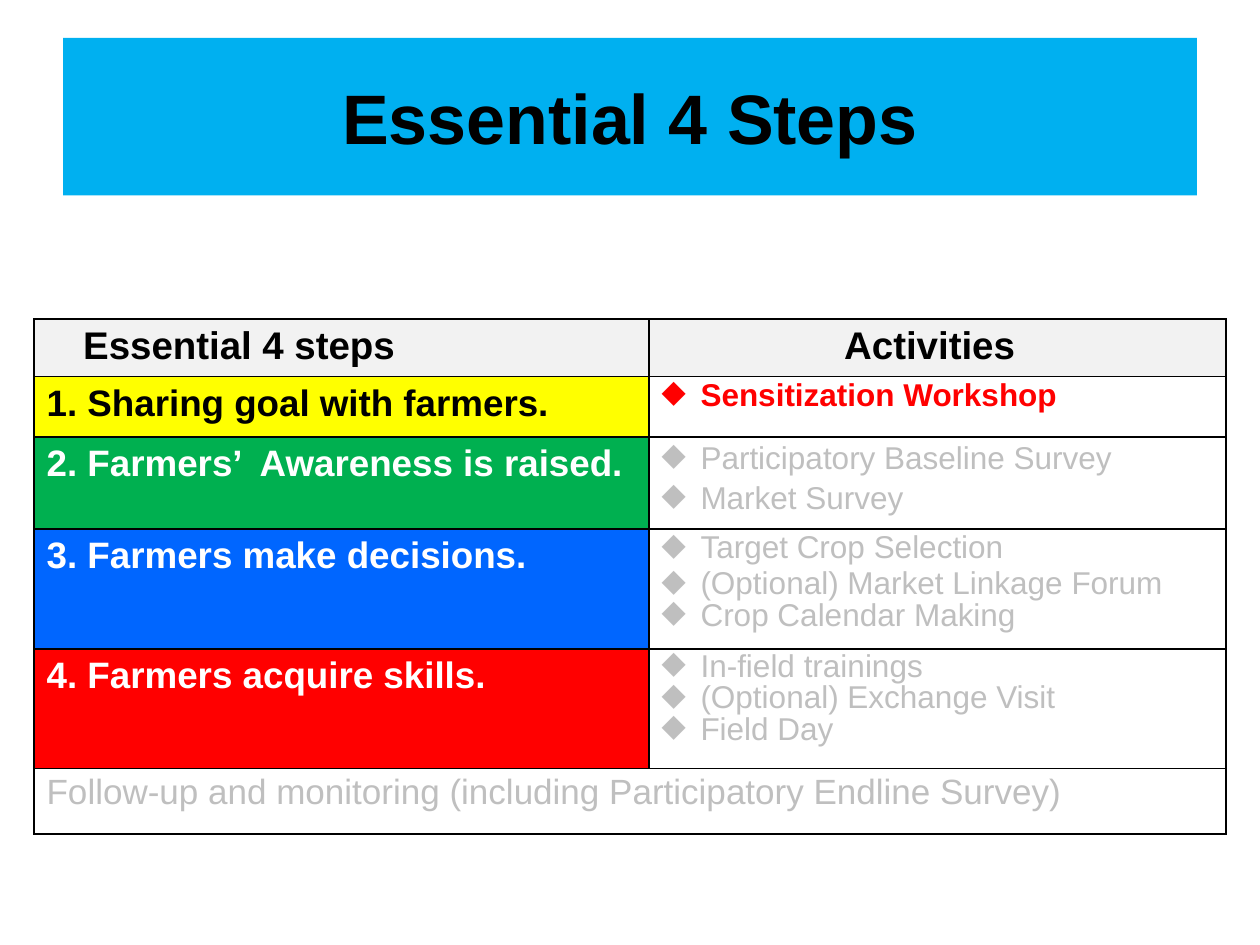
from dataclasses import dataclass

from lxml import etree
from pptx import Presentation
from pptx.dml.color import RGBColor
from pptx.enum.text import MSO_ANCHOR, PP_ALIGN
from pptx.oxml.ns import qn
from pptx.util import Inches, Pt

CENTER = PP_ALIGN.CENTER
MIDDLE = MSO_ANCHOR.MIDDLE


@dataclass(frozen=True)
class Theme:
    font: str = "Arial"
    title: float = 40
    head: float = 22
    step: float = 21
    task: float = 18
    foot: float = 20
    banner: str = "00B0F0"
    black: str = "000000"
    white: str = "FFFFFF"
    pale: str = "F2F2F2"
    grey: str = "BFBFBF"
    red: str = "FF0000"
    yellow: str = "FFFF00"
    green: str = "00B050"
    blue: str = "0066FF"


T = Theme()

TITLE = "Essential 4 Steps"
# text, left indent
HEADS = [("Essential 4 steps", 0.39), ("Activities", 1.55)]
# step, text colour, fill, task colour, top inset of tasks,
# tasks as (text, line spacing, space before)
STEPS = [
    ("1. Sharing goal with farmers.", T.black, T.yellow, T.red, 0.03,
     [("Sensitization Workshop", 18.6, 2)]),
    ("2. Farmers’  Awareness is raised.", T.white, T.green, T.grey, 0.05,
     [("Participatory Baseline Survey", 18.6, 3.2),
      ("Market Survey", 22.9, 0)]),
    ("3. Farmers make decisions.", T.white, T.blue, T.grey, 0.03,
     [("Target Crop Selection", 18.6, 2),
      ("(Optional) Market Linkage Forum", 18.6, 2),
      ("Crop Calendar Making", 18, 0)]),
    ("4. Farmers acquire skills.", T.white, T.red, T.grey, 0.03,
     [("In-field trainings", 18, 0),
      ("(Optional) Exchange Visit", 18, 0),
      ("Field Day", 18, 0)]),
]
FOOT = "Follow-up and monitoring (including Participatory Endline Survey)"

COLS = [4.88, 4.58]
ROWS = [0.46, 0.48, 0.73, 0.95, 0.95, 0.52]
LEFT, TOP = 0.27, 2.53
INDENT, HANG, GAP = 0.1, 0.31, 3.1


def add_run(par, text, size, color, bold=False):
    run = par.add_run()
    run.text = text
    font = run.font
    font.name, font.size, font.bold = T.font, Pt(size), bold
    font.color.rgb = RGBColor.from_string(color)


def set_cell(cell, fill=None, top=0.05):
    """Set insets, fill and a thin black line on all sides."""
    cell.margin_left = cell.margin_right = cell.margin_bottom = 0
    cell.margin_top = Inches(top)
    if fill:
        cell.fill.solid()
        cell.fill.fore_color.rgb = RGBColor.from_string(fill)
    else:
        cell.fill.background()
    props = cell._tc.get_or_add_tcPr()
    for spot, side in enumerate("LRTB"):
        line = etree.Element(qn(f"a:ln{side}"), w=str(Pt(1)))
        paint = etree.SubElement(line, qn("a:solidFill"))
        etree.SubElement(paint, qn("a:srgbClr"), val=T.black)
        props.insert(spot, line)


def add_line(cell, text, size, color, bold, indent=INDENT):
    par = cell.text_frame.paragraphs[0]
    par.space_before = Pt(GAP)
    par._p.get_or_add_pPr().set("marL", str(Inches(indent)))
    add_run(par, text, size, color, bold)


def add_tasks(cell, tasks, color):
    frame = cell.text_frame
    for i, (text, pitch, gap) in enumerate(tasks):
        par = frame.add_paragraph() if i else frame.paragraphs[0]
        par.line_spacing, par.space_before = Pt(pitch), Pt(gap)
        props = par._p.get_or_add_pPr()
        props.set("marL", str(Inches(INDENT + HANG)))
        props.set("indent", str(-Inches(HANG)))
        etree.SubElement(props, qn("a:buChar"), char="◆")
        add_run(par, text, T.task, color, color == T.red)


def add_title(slide):
    title = slide.shapes.title
    title.left, title.top = Inches(0.5), Inches(0.3)
    title.width, title.height = Inches(9), Inches(1.25)
    title.fill.solid()
    title.fill.fore_color.rgb = RGBColor.from_string(T.banner)
    frame = title.text_frame
    frame.vertical_anchor = MIDDLE
    par = frame.paragraphs[0]
    par.alignment = CENTER
    add_run(par, TITLE, T.title, T.black, True)


def add_grid(slide):
    table = slide.shapes.add_table(
        len(ROWS), len(COLS), Inches(LEFT), Inches(TOP),
        Inches(sum(COLS)), Inches(sum(ROWS))).table
    table.first_row = table.horz_banding = False
    for col, width in zip(table.columns, COLS):
        col.width = Inches(width)
    for row, height in zip(table.rows, ROWS):
        row.height = Inches(height)

    for c, (text, indent) in enumerate(HEADS):
        cell = table.cell(0, c)
        set_cell(cell, T.pale)
        add_line(cell, text, T.head, T.black, True, indent)

    for r, (step, ink, fill, tint, top, tasks) in enumerate(STEPS, 1):
        left, right = table.cell(r, 0), table.cell(r, 1)
        set_cell(left, fill)
        add_line(left, step, T.step, ink, True)
        set_cell(right, top=top)
        add_tasks(right, tasks, tint)

    last = len(ROWS) - 1
    first, end = table.cell(last, 0), table.cell(last, 1)
    first.merge(end)
    for cell in (first, end):
        set_cell(cell, top=0.03)
    add_line(first, FOOT, T.foot, T.grey, False)


def main():
    deck = Presentation()
    deck.slide_width, deck.slide_height = Inches(10), Inches(7.5)
    slide = deck.slides.add_slide(deck.slide_layouts[5])
    add_title(slide)
    add_grid(slide)
    deck.save("out.pptx")


if __name__ == "__main__":
    main()
